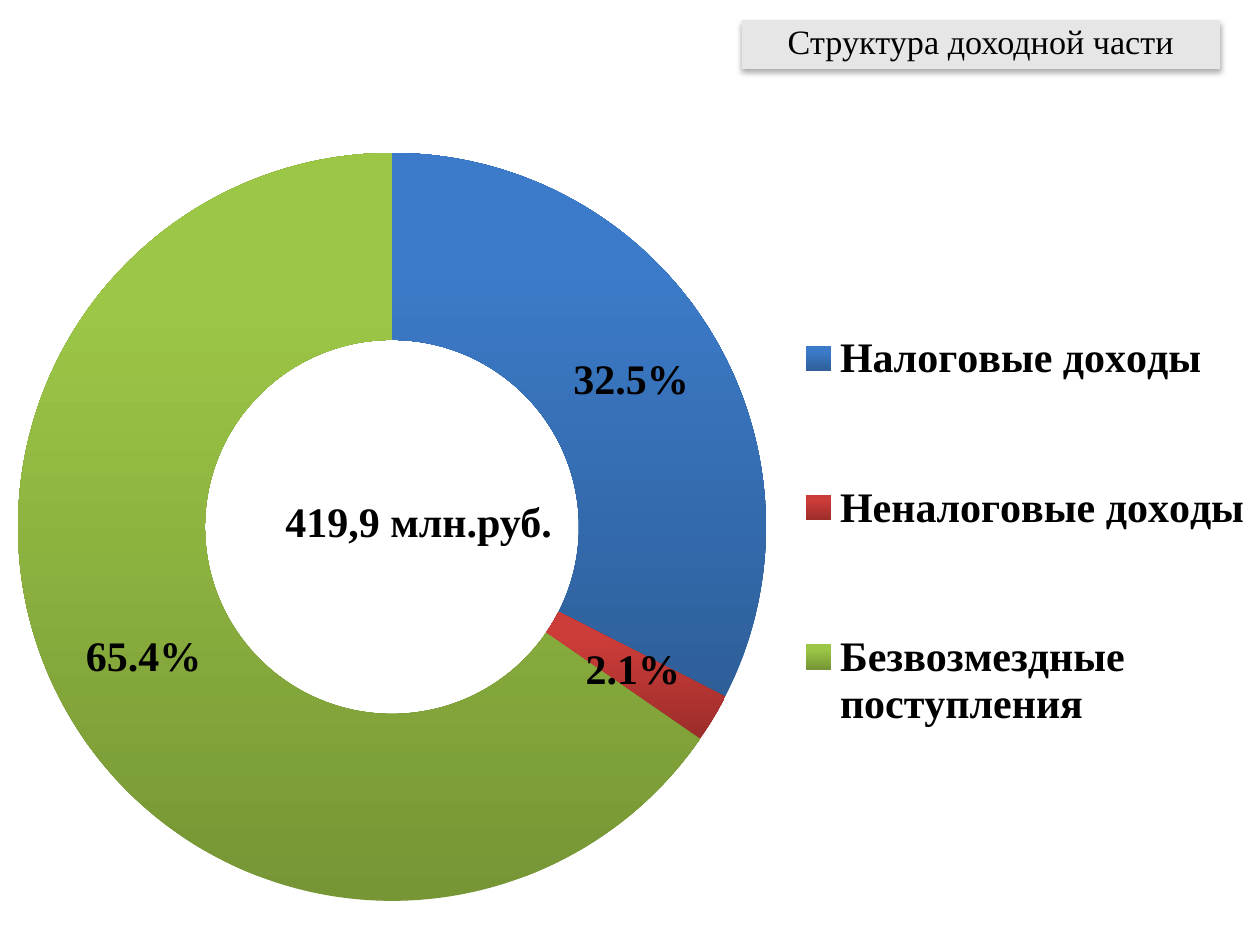
from lxml import etree
from pptx import Presentation
from pptx.chart.data import CategoryChartData
from pptx.dml.color import RGBColor
from pptx.enum.chart import XL_CHART_TYPE, XL_LEGEND_POSITION
from pptx.enum.shapes import MSO_SHAPE
from pptx.enum.text import MSO_ANCHOR, PP_ALIGN
from pptx.oxml import parse_xml
from pptx.oxml.ns import nsdecls, qn
from pptx.util import Emu, Pt

DOUGHNUT = XL_CHART_TYPE.DOUGHNUT
LEGEND_RIGHT = XL_LEGEND_POSITION.RIGHT
RECTANGLE = MSO_SHAPE.RECTANGLE
MIDDLE = MSO_ANCHOR.MIDDLE
CENTER = PP_ALIGN.CENTER

PX = 914400 / 126
FONT = "Times New Roman"
BLACK = RGBColor(0x00, 0x00, 0x00)
LIGHT_GREY = RGBColor(0xE6, 0xE6, 0xE6)
DARK_BLUE = RGBColor(0x2E, 0x5F, 0x99)
BLUE = RGBColor(0x3C, 0x7B, 0xC9)
DARK_RED = RGBColor(0x9B, 0x2D, 0x2A)
RED = RGBColor(0xCC, 0x3C, 0x39)
DARK_GREEN = RGBColor(0x76, 0x95, 0x35)
GREEN = RGBColor(0x9C, 0xC6, 0x46)

INCOME = [
    ("Налоговые доходы", 32.5, DARK_BLUE, BLUE),
    ("Неналоговые доходы", 2.1, DARK_RED, RED),
    ("Безвозмездные поступления", 65.4, DARK_GREEN, GREEN),
]
CHART_BOX = (0, 110, 1260, 835)
RING_BOX = (18, 43, 748, 748)
LEGEND_BOX = (790, 123, 470, 597)


def px(*lengths):
    """Turn pixel lengths into EMU."""
    return [Emu(round(length * PX)) for length in lengths]


def style_font(font, size, bold=False):
    """Give a font the slide's typeface and colour."""
    font.name = FONT
    font.size = Pt(size)
    font.bold = bold
    font.color.rgb = BLACK


def add_soft_shadow(shape):
    """Put a faint shadow straight below a shape."""
    shape.shadow.inherit = False
    effects = shape._element.spPr.find(qn("a:effectLst"))
    effects.append(parse_xml(
        f'<a:outerShdw {nsdecls("a")} blurRad="44450" dist="27940" dir="5400000" '
        'algn="ctr" rotWithShape="0"><a:srgbClr val="000000">'
        '<a:alpha val="32000"/></a:srgbClr></a:outerShdw>'))


def add_heading(slide, text, box):
    """Add the grey heading plate."""
    heading = slide.shapes.add_shape(RECTANGLE, *px(*box))
    heading.fill.solid()
    heading.fill.fore_color.rgb = LIGHT_GREY
    heading.line.fill.background()
    add_soft_shadow(heading)
    frame = heading.text_frame
    frame.text = text
    frame.vertical_anchor = MIDDLE
    paragraph = frame.paragraphs[0]
    paragraph.alignment = CENTER
    paragraph.line_spacing = 0.8
    style_font(paragraph.runs[0].font, 19.5)


def add_total(slide, text, box):
    """Add the total that stands inside the ring."""
    frame = slide.shapes.add_textbox(*px(*box)).text_frame
    frame.word_wrap = True
    frame.text = text
    style_font(frame.paragraphs[0].runs[0].font, 24, True)


def set_layout(parent, box, inner=False):
    """Place a chart part by its pixel box within the chart."""
    for old in parent.findall(qn("c:layout")):
        parent.remove(old)
    layout = parse_xml(f'<c:layout {nsdecls("c")}/>')
    manual = etree.SubElement(layout, qn("c:manualLayout"))
    settings = [("layoutTarget", "inner")] if inner else []
    settings += [("xMode", "edge"), ("yMode", "edge")]
    settings += [(key, f"{length / whole:.4f}")
                 for key, length, whole in zip("xywh", box, CHART_BOX[2:] * 2)]
    for key, value in settings:
        etree.SubElement(manual, qn(f"c:{key}"), val=value)
    if inner:
        parent.insert(0, layout)
    else:
        parent.find(qn("c:legendPos")).addnext(layout)


def shade_slice(point, dark, light):
    """Fill a slice with a gradient that lightens upwards."""
    fill = point.format.fill
    fill.gradient()
    fill.gradient_angle = 90
    for stop, color, position in zip(fill.gradient_stops, (dark, light), (0, 0.8)):
        stop.color.rgb = color
        stop.position = position
    point.format.line.fill.background()


def add_income_ring(slide):
    """Add the doughnut chart of income shares."""
    shares = CategoryChartData()
    shares.categories = [name for name, *_ in INCOME]
    shares.add_series("Series 1", [share for _, share, *_ in INCOME])
    chart = slide.shapes.add_chart(DOUGHNUT, *px(*CHART_BOX), shares).chart
    chart.has_title = False
    style_font(chart.font, 24, True)

    chart.has_legend = True
    chart.legend.position = LEGEND_RIGHT
    chart.legend.include_in_layout = False
    set_layout(chart.legend._element, LEGEND_BOX)

    plot = chart.plots[0]
    set_layout(plot._element.getparent(), RING_BOX, inner=True)
    plot.vary_by_categories = True
    series = plot.series[0]
    for index, (_, _, dark, light) in enumerate(INCOME):
        shade_slice(series.points[index], dark, light)

    labels = series.data_labels
    labels.show_percentage = True
    labels.show_value = False
    labels.number_format = "0.0%"
    labels.number_format_is_linked = False
    style_font(labels.font, 24, True)

    chart._chartSpace.find(qn("c:chart")).addnext(parse_xml(
        f'<c:spPr {nsdecls("c", "a")}><a:noFill/><a:ln><a:noFill/></a:ln></c:spPr>'))


def main():
    """Build the slide and save it."""
    deck = Presentation()
    deck.slide_width, deck.slide_height = px(1260, 945)
    slide = deck.slides.add_slide(deck.slide_layouts[6])
    add_heading(slide, "Структура доходной части", (742, 20, 478, 49))
    add_total(slide, "419,9 млн.руб.", (273, 489, 377, 63))
    add_income_ring(slide)
    deck.save("out.pptx")


if __name__ == "__main__":
    main()
